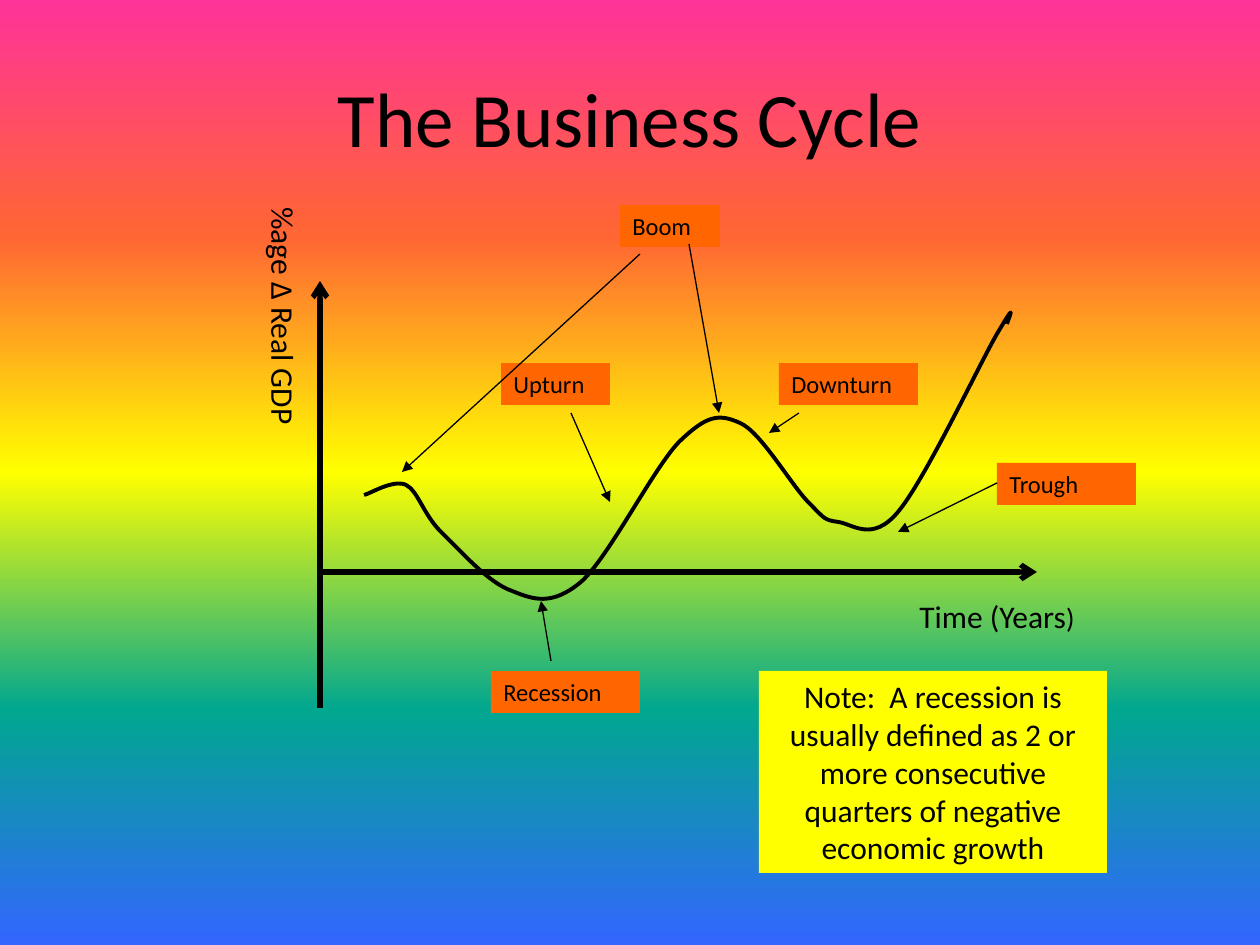
import dataclasses
import itertools

import pptx
import pptx.dml.color
import pptx.enum.shapes
import pptx.enum.text
import pptx.oxml
import pptx.oxml.ns
import pptx.util

EMU_PER_PX = 914400 / 126
FONT = "Calibri"
BLACK, ORANGE, YELLOW = "000000", "FF6600", "FFFF00"
RAINBOW = ["FF3399", "FF6633", "FFFF00", "01A78F", "3366FF"]
LEFT, CENTER = pptx.enum.text.PP_ALIGN.LEFT, pptx.enum.text.PP_ALIGN.CENTER

Point = tuple[int, int]


@dataclasses.dataclass
class Run:
    text: str
    size: int


@dataclasses.dataclass
class Box:
    left: int
    top: int
    width: int
    height: int
    runs: list[Run]
    fill: str | None = None
    align: pptx.enum.text.PP_ALIGN = LEFT
    middle: bool = False
    vertical: bool = False


@dataclasses.dataclass
class Arrow:
    start: Point
    end: Point
    weight: float = 0.75
    head: str = "triangle"


def label(left: int, top: int, width: int, text: str) -> Box:
    return Box(left, top, width, 42, [Run(text, 14)], ORANGE)


BOXES = [
    Box(63, 38, 1134, 158, [Run("The Business Cycle", 44)], align=CENTER, middle=True),
    Box(213, 195, 96, 280, [Run("%age ∆ Real GDP", 18)], vertical=True),
    Box(907, 591, 221, 49, [Run("Time (Years", 18), Run(")", 16)]),
    label(501, 363, 109, "Upturn"),
    label(620, 205, 100, "Boom"),
    label(779, 363, 139, "Downturn"),
    label(491, 671, 149, "Recession"),
    label(997, 463, 139, "Trough"),
    Box(759, 671, 348, 202, [Run(
        "Note:  A recession is usually defined as 2 or more consecutive "
        "quarters of negative economic growth", 18)], YELLOW, CENTER),
]
AXES = [
    Arrow((320, 708), (320, 281), 3, "arrow"),
    Arrow((322, 572), (1037, 572), 3, "arrow"),
]
POINTERS = [
    Arrow((571, 413), (610, 502)),
    Arrow((689, 244), (719, 413)),
    Arrow((799, 413), (769, 433)),
    Arrow((551, 661), (541, 601)),
    Arrow((640, 254), (402, 472)),
    Arrow((997, 483), (898, 532)),
]
# Start point, then two control points and an end point for each segment.
CYCLE = [
    (364, 495),
    (370, 494), (393, 479), (406, 485),
    (418, 491), (423, 514), (441, 532),
    (459, 549), (488, 583), (512, 591),
    (534, 600), (552, 606), (581, 582),
    (609, 557), (653, 469), (679, 442),
    (706, 416), (718, 413), (740, 423),
    (761, 432), (791, 485), (809, 503),
    (825, 519), (824, 520), (838, 522),
    (853, 524), (872, 543), (898, 512),
    (925, 480), (979, 365), (997, 334),
    (1016, 302), (1011, 312), (1007, 324),
]


def px(length: int) -> int:
    return round(length * EMU_PER_PX)


def color(value: str) -> pptx.dml.color.RGBColor:
    return pptx.dml.color.RGBColor.from_string(value)


def child(parent, tag: str, **attributes: str):
    """Append a new element to parent."""
    element = pptx.oxml.parse_xml(f"<{tag} {pptx.oxml.ns.nsdecls('a')}/>")
    for name, value in attributes.items():
        element.set(name, value)
    parent.append(element)
    return element


def paint_background(slide, colors: list[str]) -> None:
    """Fill the slide with an evenly spaced gradient from top to bottom."""
    fill = slide.background.fill
    fill.gradient()
    fill.gradient_angle = 270
    stops = next(slide.element.iter(pptx.oxml.ns.qn("a:gsLst")))
    for stop in list(stops):
        stops.remove(stop)
    for index, value in enumerate(colors):
        position = index * 100000 // (len(colors) - 1)
        stop = child(stops, "a:gs", pos=str(position))
        child(stop, "a:srgbClr", val=value)


def draw_box(slide, box: Box) -> None:
    place = [px(length) for length in (box.left, box.top, box.width, box.height)]
    if box.fill:
        shape = slide.shapes.add_shape(pptx.enum.shapes.MSO_SHAPE.RECTANGLE, *place)
        shape.shadow.inherit = False
        shape.fill.solid()
        shape.fill.fore_color.rgb = color(box.fill)
        shape.line.fill.background()
    else:
        shape = slide.shapes.add_textbox(*place)
    frame = shape.text_frame
    frame.word_wrap = True
    anchor = pptx.enum.text.MSO_ANCHOR
    frame.vertical_anchor = anchor.MIDDLE if box.middle else anchor.TOP
    if box.vertical:
        frame._txBody.bodyPr.set("vert", "eaVert")
    paragraph = frame.paragraphs[0]
    paragraph.alignment = box.align
    for part in box.runs:
        run = paragraph.add_run()
        run.text = part.text
        run.font.name = FONT
        run.font.size = pptx.util.Pt(part.size)
        run.font.color.rgb = color(BLACK)


def draw_arrow(slide, arrow: Arrow) -> None:
    connector = slide.shapes.add_connector(
        pptx.enum.shapes.MSO_CONNECTOR.STRAIGHT,
        *map(px, arrow.start + arrow.end))
    connector.line.color.rgb = color(BLACK)
    connector.line.width = pptx.util.Pt(arrow.weight)
    child(connector.line._get_or_add_ln(), "a:tailEnd", type=arrow.head)
    child(connector._element.spPr, "a:effectLst")


def draw_curve(slide, points: list[Point]) -> None:
    """Draw the points as a chain of cubic Bezier segments."""
    builder = slide.shapes.build_freeform(*points[0], scale=EMU_PER_PX)
    builder.add_line_segments(points[1:], close=False)
    shape = builder.convert_to_shape()
    shape.shadow.inherit = False
    shape.fill.background()
    shape.line.color.rgb = color(BLACK)
    shape.line.width = pptx.util.Pt(2.25)
    outline = next(shape._element.iter(pptx.oxml.ns.qn("a:path")))
    steps = iter(outline.findall(pptx.oxml.ns.qn("a:lnTo")))
    while segment := list(itertools.islice(steps, 3)):
        curve = child(outline, "a:cubicBezTo")
        for step in segment:
            curve.append(step[0])
            outline.remove(step)


def main() -> None:
    presentation = pptx.Presentation()
    presentation.slide_width = px(1260)
    presentation.slide_height = px(945)
    slide = presentation.slides.add_slide(presentation.slide_layouts[6])
    paint_background(slide, RAINBOW)
    for axis in AXES:
        draw_arrow(slide, axis)
    draw_curve(slide, CYCLE)
    for box in BOXES:
        draw_box(slide, box)
    for pointer in POINTERS:
        draw_arrow(slide, pointer)
    presentation.save("out.pptx")


if __name__ == "__main__":
    main()
